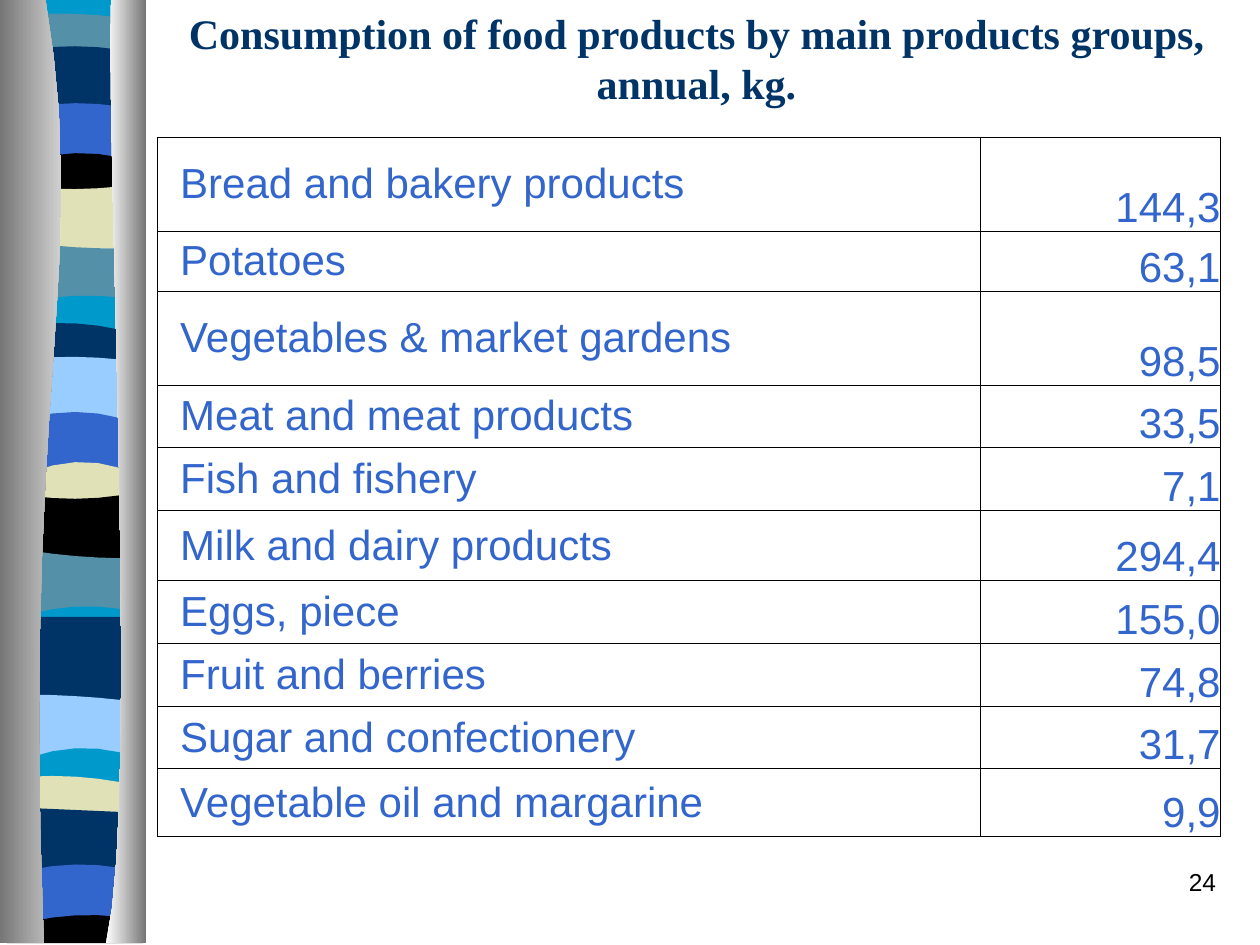
from dataclasses import dataclass
from typing import NamedTuple

from lxml.etree import SubElement
from pptx import Presentation
from pptx.dml.color import RGBColor
from pptx.enum.text import MSO_ANCHOR, PP_ALIGN
from pptx.oxml.ns import qn
from pptx.util import Pt


@dataclass(frozen=True)
class Theme:
    navy: str = "003366"
    blue: str = "3366CC"
    sky: str = "99CCFF"
    teal: str = "0099CC"
    steel: str = "5490A8"
    cream: str = "E1E1B7"
    black: str = "000000"
    shade: str = "767676"
    silver: str = "D0D0D0"
    white: str = "FFFFFF"
    heading_font: str = "Times New Roman"
    body_font: str = "Arial"
    large: int = 24
    small: int = 14
    border: float = 0.5


THEME = Theme()
SLIDE_WIDTH, SLIDE_HEIGHT = 720, 540
RIBBON_LEFT, RIBBON_RIGHT, RIBBON_END = 4, 82, 539
EDGE_STOPS = (23, 46, 69)
WAVE_STEPS, COLUMN_STEPS = 6, 14


class Point(NamedTuple):
    x: float
    y: float


class Band(NamedTuple):
    colour: str
    top: tuple[float, float, float]


class Column(NamedTuple):
    outer_x: float
    curve: tuple[Point, Point, Point, Point]
    colours: tuple[str, str]


class Row(NamedTuple):
    product: str
    amount: str
    height: float


BANDS = [
    Band(THEME.teal, (0, 0, 0)),
    Band(THEME.steel, (8, 8, 10)),
    Band(THEME.navy, (27.5, 26.5, 28.5)),
    Band(THEME.blue, (60.5, 59, 61)),
    Band(THEME.black, (90, 87.5, 90)),
    Band(THEME.cream, (107.5, 108, 106.5)),
    Band(THEME.steel, (139.5, 141.5, 142)),
    Band(THEME.teal, (171, 169, 170)),
    Band(THEME.navy, (185, 185, 188.5)),
    Band(THEME.sky, (204.5, 204, 205.5)),
    Band(THEME.blue, (237.5, 235.5, 239)),
    Band(THEME.cream, (268, 264, 267.5)),
    Band(THEME.black, (284, 285, 283)),
    Band(THEME.steel, (315.5, 318, 319)),
    Band(THEME.teal, (349.5, 346.5, 348)),
    Band(THEME.navy, (352.5, 352.5, 352.5)),
    Band(THEME.sky, (397, 398, 400)),
    Band(THEME.teal, (431, 427.5, 430)),
    Band(THEME.cream, (443.5, 444, 447)),
    Band(THEME.navy, (462, 463, 464)),
    Band(THEME.blue, (496, 494, 496)),
    Band(THEME.black, (525.5, 523, 524)),
]

COLUMNS = [
    Column(0, (Point(26, 0), Point(52, 155.5), Point(12, 213), Point(25, 539)),
           (THEME.shade, THEME.silver)),
    Column(83.5, (Point(63.5, 0), Point(60.5, 90), Point(80, 465), Point(60.5, 539)),
           (THEME.white, THEME.shade)),
]

ROWS = [
    Row("Bread and bakery products", "144,3", 53.7),
    Row("Potatoes", "63,1", 34.3),
    Row("Vegetables & market gardens", "98,5", 53.7),
    Row("Meat and meat products", "33,5", 35.5),
    Row("Fish and fishery", "7,1", 36),
    Row("Milk and dairy products", "294,4", 40),
    Row("Eggs, piece", "155,0", 36),
    Row("Fruit and berries", "74,8", 36),
    Row("Sugar and confectionery", "31,7", 35.5),
    Row("Vegetable oil and margarine", "9,9", 38.9),
]


def write_text(frame, text: str, *, size: float = THEME.large, colour: str = THEME.blue,
               font: str = THEME.body_font, bold: bool = False, align=PP_ALIGN.LEFT) -> None:
    paragraph = frame.paragraphs[0]
    paragraph.alignment = align
    run = paragraph.add_run()
    run.text = text
    run.font.name = font
    run.font.size = Pt(size)
    run.font.bold = bold
    run.font.color.rgb = RGBColor.from_string(colour)


def add_text_frame(slide, left: float, top: float, width: float, height: float, anchor):
    frame = slide.shapes.add_textbox(Pt(left), Pt(top), Pt(width), Pt(height)).text_frame
    frame.word_wrap = True
    frame.vertical_anchor = anchor
    return frame


def add_outline(slide, points: list[Point]):
    start, *others = [(Pt(point.x), Pt(point.y)) for point in points]
    builder = slide.shapes.build_freeform(*start, scale=1.0)
    builder.add_line_segments(others, close=True)
    shape = builder.convert_to_shape()
    shape.shadow.inherit = False
    shape.line.fill.background()
    return shape


def wave(heights: tuple[float, float, float]) -> list[Point]:
    left, middle, right = heights
    points = []
    for step in range(WAVE_STEPS + 1):
        x = RIBBON_LEFT + (RIBBON_RIGHT - RIBBON_LEFT) * step / WAVE_STEPS
        u = (x - EDGE_STOPS[1]) / (EDGE_STOPS[2] - EDGE_STOPS[1])
        y = middle + (right - left) / 2 * u + ((left + right) / 2 - middle) * u * u
        points.append(Point(x, y))
    return points


def bezier(controls: tuple[Point, Point, Point, Point]) -> list[Point]:
    points = []
    for step in range(COLUMN_STEPS + 1):
        t = step / COLUMN_STEPS
        weights = ((1 - t) ** 3, 3 * t * (1 - t) ** 2, 3 * t * t * (1 - t), t ** 3)
        points.append(Point(sum(w * p.x for w, p in zip(weights, controls)),
                            sum(w * p.y for w, p in zip(weights, controls))))
    return points


def draw_ribbon(slide, bands: list[Band]) -> None:
    edges = [wave(band.top) for band in bands]
    bottoms = [max(point.y for point in edge) for edge in edges[1:]] + [RIBBON_END]
    for band, edge, bottom in zip(bands, edges, bottoms):
        corners = [Point(RIBBON_RIGHT, bottom), Point(RIBBON_LEFT, bottom)]
        shape = add_outline(slide, edge + corners)
        shape.fill.solid()
        shape.fill.fore_color.rgb = RGBColor.from_string(band.colour)


def draw_column(slide, column: Column) -> None:
    edge = bezier(column.curve)
    corners = [Point(column.outer_x, edge[-1].y), Point(column.outer_x, 0)]
    shape = add_outline(slide, edge + corners)
    shape.fill.gradient()
    shape.fill.gradient_angle = 0
    for stop, colour in zip(shape.fill.gradient_stops, column.colours):
        stop.color.rgb = RGBColor.from_string(colour)


def format_cell(cell, anchor, left_margin: float) -> None:
    cell.vertical_anchor = anchor
    cell.margin_left = Pt(left_margin)
    cell.margin_right = cell.margin_top = cell.margin_bottom = Pt(0)
    properties = cell._tc.get_or_add_tcPr()
    for side in ("a:lnL", "a:lnR", "a:lnT", "a:lnB"):
        line = SubElement(properties, qn(side), w=str(Pt(THEME.border)))
        SubElement(SubElement(line, qn("a:solidFill")), qn("a:srgbClr"), val=THEME.black)
    cell.fill.background()


def draw_table(slide, rows: list[Row]) -> None:
    height = sum(row.height for row in rows)
    table = slide.shapes.add_table(len(rows), 2, Pt(90), Pt(78.5), Pt(607.5), Pt(height)).table
    table.first_row = table.horz_banding = False
    table.columns[0].width, table.columns[1].width = Pt(470), Pt(137.5)
    for index, row in enumerate(rows):
        table.rows[index].height = Pt(row.height)
        product, amount = table.rows[index].cells
        format_cell(product, MSO_ANCHOR.MIDDLE, 13)
        write_text(product.text_frame, row.product)
        format_cell(amount, MSO_ANCHOR.BOTTOM, 0)
        write_text(amount.text_frame, row.amount, align=PP_ALIGN.RIGHT)


def main() -> None:
    presentation = Presentation()
    presentation.slide_width, presentation.slide_height = Pt(SLIDE_WIDTH), Pt(SLIDE_HEIGHT)
    slide = presentation.slides.add_slide(presentation.slide_layouts[6])
    draw_ribbon(slide, BANDS)
    for column in COLUMNS:
        draw_column(slide, column)
    write_text(add_text_frame(slide, 552, 492, 150, 36, MSO_ANCHOR.TOP), "24",
               size=THEME.small, colour=THEME.black, align=PP_ALIGN.RIGHT)
    write_text(add_text_frame(slide, 92, 0, 612, 66, MSO_ANCHOR.MIDDLE),
               "Consumption of food products by main products groups, annual, kg.",
               colour=THEME.navy, font=THEME.heading_font, bold=True, align=PP_ALIGN.CENTER)
    draw_table(slide, ROWS)
    presentation.save("out.pptx")


if __name__ == "__main__":
    main()
